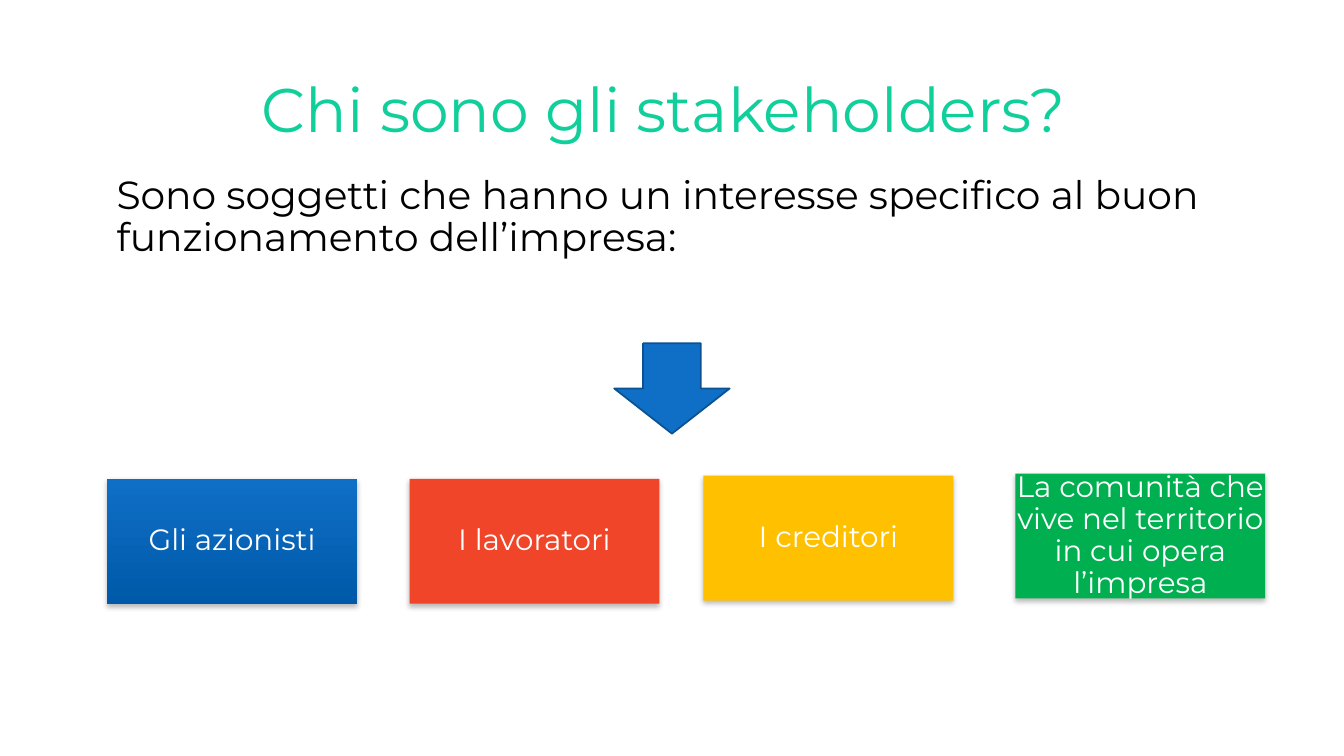
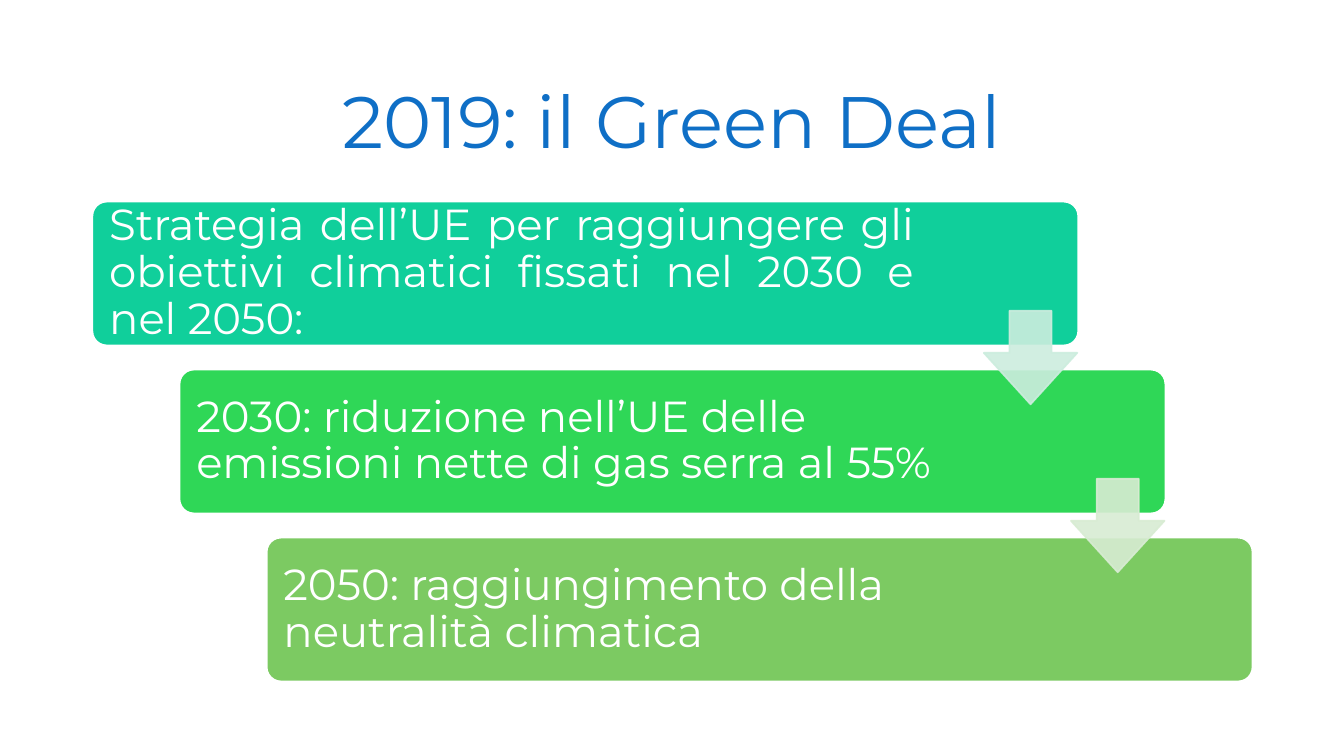
from lxml.etree import SubElement
from pptx import Presentation
from pptx.dml.color import RGBColor
from pptx.enum.shapes import MSO_SHAPE as Shape
from pptx.enum.text import MSO_ANCHOR as Anchor, PP_ALIGN as Align
from pptx.oxml.ns import qn
from pptx.util import Pt

PX = 9525
FONT = "Montserrat"

WHITE = RGBColor(0xFF, 0xFF, 0xFF)
BLACK = RGBColor(0, 0, 0)
BLUE = RGBColor(0x0F, 0x6F, 0xC6)
DARK_BLUE = RGBColor(0x00, 0x59, 0xA9)
EDGE_BLUE = RGBColor(0x0B, 0x52, 0x92)
TEAL = RGBColor(0x10, 0xCF, 0x9B)
RED = RGBColor(0xF0, 0x45, 0x28)
YELLOW = RGBColor(0xFF, 0xC0, 0x00)
GREEN = RGBColor(0x00, 0xB0, 0x50)
BRIGHT_GREEN = RGBColor(0x2F, 0xD7, 0x57)
LEAF_GREEN = RGBColor(0x7C, 0xCA, 0x62)
PALE_TEAL = RGBColor(0xCC, 0xED, 0xDE)
PALE_GREEN = RGBColor(0xD8, 0xEC, 0xD3)

STAKEHOLDERS_TITLE = "Chi sono gli stakeholders? "
DEFINITION = "Sono soggetti che hanno un interesse specifico al buon funzionamento dell’impresa:"
STAKEHOLDERS = [
    ("Gli azionisti", 102, 456, (BLUE, DARK_BLUE)),
    ("I lavoratori", 390, 456, (RED,)),
    ("I creditori", 670, 453, (YELLOW,)),
    ("La comunità che vive nel territorio in cui opera l’impresa", 967, 451, (GREEN,)),
]

DEAL_TITLE = "2019: il Green Deal"
DEAL_STEPS = [
    ("Strategia dell’UE per raggiungere gli obiettivi climatici fissati nel 2030 e nel 2050: ",
     TEAL, Align.JUSTIFY, 153),
    ("2030: riduzione nell’UE delle emissioni nette di gas serra al 55%",
     BRIGHT_GREEN, Align.LEFT, 185),
    ("2050: raggiungimento della neutralità climatica", LEAF_GREEN, Align.LEFT, 185),
]
STEP_ARROWS = [PALE_TEAL, PALE_GREEN]
STEP_DX, STEP_DY = 83, 160


def px(*lengths):
    return [length * PX for length in lengths]


def write(shape, text, size, color, align, anchor=Anchor.MIDDLE, margins=(10, 5, 10, 5)):
    frame = shape.text_frame
    frame.word_wrap = True
    frame.vertical_anchor = anchor
    (frame.margin_left, frame.margin_top,
     frame.margin_right, frame.margin_bottom) = px(*margins)
    paragraph = frame.paragraphs[0]
    paragraph.text = text
    paragraph.alignment = align
    paragraph.line_spacing = 0.9
    font = paragraph.font
    font.name, font.size, font.color.rgb = FONT, Pt(size), color


def add_text(slide, box, *args, **options):
    write(slide.shapes.add_textbox(*px(*box)), *args, **options)


def add_block(slide, kind, box, colors, edge=None):
    block = slide.shapes.add_shape(kind, *px(*box))
    block.shadow.inherit = False
    if len(colors) > 1:
        block.fill.gradient()
        block.fill.gradient_angle = 270
        for stop, color in zip(block.fill.gradient_stops, colors):
            stop.color.rgb = color
    else:
        block.fill.solid()
        block.fill.fore_color.rgb = colors[0]
    if edge is None:
        block.line.fill.background()
    else:
        block.line.color.rgb = edge
        block.line.width = Pt(1.25)
    return block


def set_alpha(color_element, percent):
    SubElement(color_element, qn("a:alpha"), val=str(percent * 1000))


def cast_shadow(block):
    effects = block.element.spPr.find(qn("a:effectLst"))
    shadow = SubElement(effects, qn("a:outerShdw"), blurRad=str(Pt(4)), dist=str(Pt(2)),
                        dir="5400000", rotWithShape="0")
    set_alpha(SubElement(shadow, qn("a:srgbClr"), val="000000"), 28)


def new_slide(deck, title, top, height, size, color):
    slide = deck.slides.add_slide(deck.slide_layouts[6])
    add_text(slide, (88, top, 1104, height), title, size, color, Align.CENTER)
    return slide


def build_stakeholders(deck):
    slide = new_slide(deck, STAKEHOLDERS_TITLE, 38, 139, 44, TEAL)
    add_text(slide, (101, 162, 1166, 139), DEFINITION, 28, BLACK, Align.LEFT, anchor=Anchor.TOP)
    for name, left, top, colors in STAKEHOLDERS:
        card = add_block(slide, Shape.RECTANGLE, (left, top, 238, 119), colors)
        cast_shadow(card)
        write(card, name, 21, WHITE, Align.CENTER, margins=(1, 1, 1, 1))
    add_block(slide, Shape.DOWN_ARROW, (585, 327, 110, 86), (BLUE,), EDGE_BLUE)


def build_green_deal(deck):
    slide = new_slide(deck, DEAL_TITLE, 59, 119, 52, BLUE)
    for i, (text, color, align, right_margin) in enumerate(DEAL_STEPS):
        step = add_block(slide, Shape.ROUNDED_RECTANGLE,
                         (88 + i * STEP_DX, 192 + i * STEP_DY, 939, 137), (color,), WHITE)
        step.adjustments[0] = 0.1
        write(step, text, 31, WHITE, align, margins=(12, 12, right_margin, 12))
    for i, color in enumerate(STEP_ARROWS):
        arrow = add_block(slide, Shape.DOWN_ARROW,
                          (937 + i * STEP_DX, 296 + i * STEP_DY, 89, 89), (color,), color)
        arrow.adjustments[0], arrow.adjustments[1] = 0.45, 0.55
        for color_element in arrow.element.spPr.iter(qn("a:srgbClr")):
            set_alpha(color_element, 90)


def main():
    deck = Presentation()
    deck.slide_width, deck.slide_height = px(1280, 720)
    build_stakeholders(deck)
    build_green_deal(deck)
    deck.save("out.pptx")


if __name__ == "__main__":
    main()
